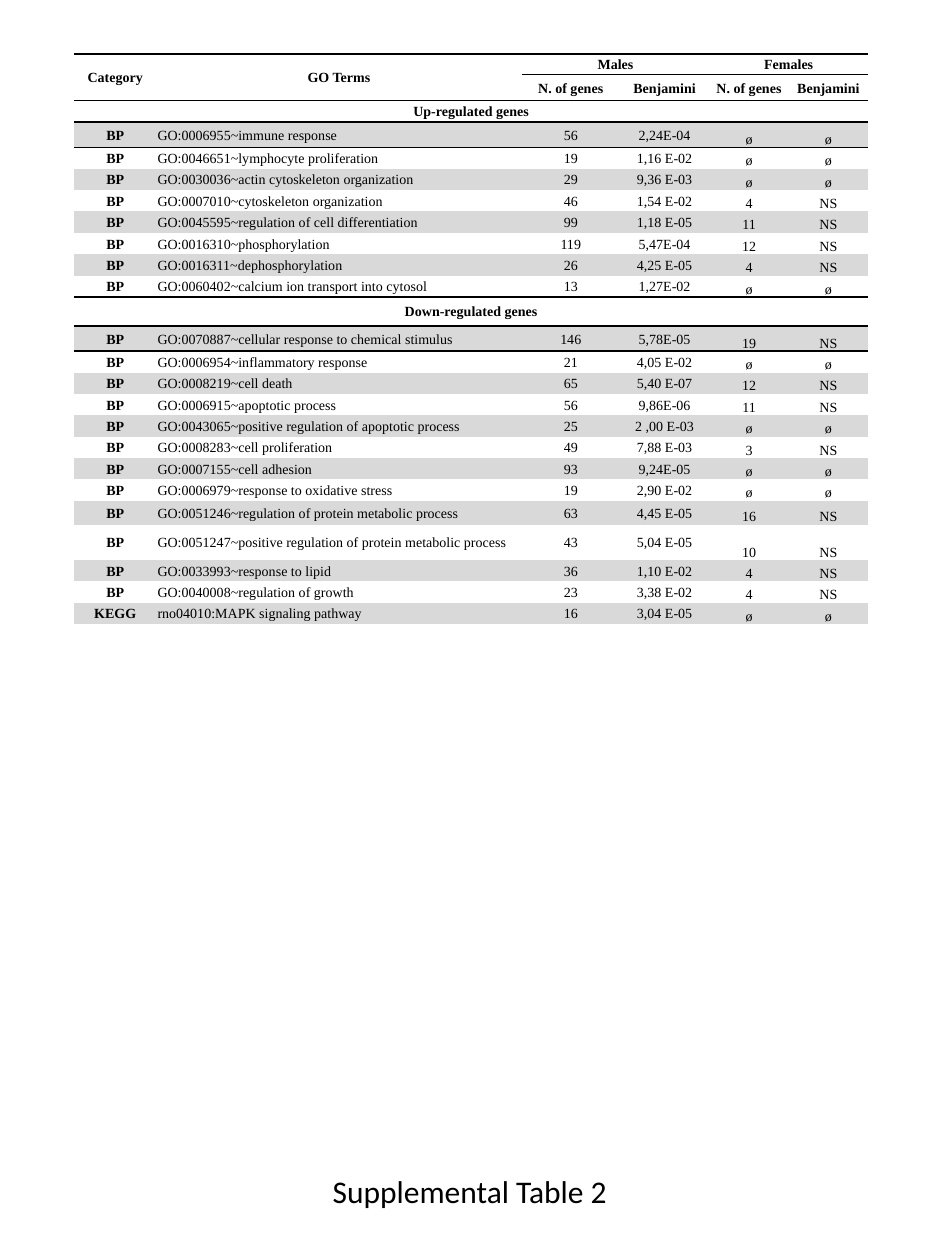
from lxml import etree
from pptx import Presentation
from pptx.dml.color import RGBColor
from pptx.enum.text import MSO_ANCHOR, MSO_AUTO_SIZE, PP_ALIGN
from pptx.oxml.ns import qn
from pptx.util import Inches, Pt

MID, LOW = MSO_ANCHOR.MIDDLE, MSO_ANCHOR.BOTTOM
LEFT, CENTER = PP_ALIGN.LEFT, PP_ALIGN.CENTER
PLAIN = "{2D5ABB26-0587-4C30-8999-92F81FD0307C}"  # no style, no grid


class Theme:
    ink = RGBColor(0, 0, 0)
    band = RGBColor(0xD9, 0xD9, 0xD9)
    table_font, title_font = "Times New Roman", "Calibri"
    table_size, title_size = Pt(8), Pt(18)
    rule = Pt(1)


UP = [
    ("BP", "GO:0006955~immune response", "56", "2,24E-04", "ø", "ø"),
    ("BP", "GO:0046651~lymphocyte proliferation", "19", "1,16 E-02", "ø", "ø"),
    ("BP", "GO:0030036~actin cytoskeleton organization", "29", "9,36 E-03", "ø", "ø"),
    ("BP", "GO:0007010~cytoskeleton organization", "46", "1,54 E-02", "4", "NS"),
    ("BP", "GO:0045595~regulation of cell differentiation", "99", "1,18 E-05", "11", "NS"),
    ("BP", "GO:0016310~phosphorylation", "119", "5,47E-04", "12", "NS"),
    ("BP", "GO:0016311~dephosphorylation", "26", "4,25 E-05", "4", "NS"),
    ("BP", "GO:0060402~calcium ion transport into cytosol", "13", "1,27E-02", "ø", "ø"),
]
DOWN = [
    ("BP", "GO:0070887~cellular response to chemical stimulus", "146", "5,78E-05", "19", "NS"),
    ("BP", "GO:0006954~inflammatory response", "21", "4,05 E-02", "ø", "ø"),
    ("BP", "GO:0008219~cell death", "65", "5,40 E-07", "12", "NS"),
    ("BP", "GO:0006915~apoptotic process", "56", "9,86E-06", "11", "NS"),
    ("BP", "GO:0043065~positive regulation of apoptotic process", "25", "2 ,00 E-03", "ø", "ø"),
    ("BP", "GO:0008283~cell proliferation", "49", "7,88 E-03", "3", "NS"),
    ("BP", "GO:0007155~cell adhesion", "93", "9,24E-05", "ø", "ø"),
    ("BP", "GO:0006979~response to oxidative stress", "19", "2,90 E-02", "ø", "ø"),
    ("BP", "GO:0051246~regulation of protein metabolic process", "63", "4,45 E-05", "16", "NS"),
    ("BP", "GO:0051247~positive regulation of protein metabolic process", "43", "5,04 E-05",
     "10", "NS"),
    ("BP", "GO:0033993~response to lipid", "36", "1,10 E-02", "4", "NS"),
    ("BP", "GO:0040008~regulation of growth", "23", "3,38 E-02", "4", "NS"),
    ("KEGG", "rno04010:MAPK signaling pathway", "16", "3,04 E-05", "ø", "ø"),
]
HEAD = [
    ("Category", "GO Terms", "Males", "", "Females", ""),
    ("", "", "N. of genes", "Benjamini", "N. of genes", "Benjamini"),
]
rows = [*HEAD, ("Up-regulated genes",) + ("",) * 5, *UP,
        ("Down-regulated genes",) + ("",) * 5, *DOWN]
up_row = len(HEAD)
down_row = up_row + 1 + len(UP)
bands = (up_row, down_row)
ruled = {0, 1, up_row, down_row - 1, down_row}  # rows with a line below

widths = [0.65, 2.9, 0.78, 0.71, 0.63, 0.63]
heights = dict.fromkeys(range(len(rows)), 0.17)
heights |= {0: 0.16, 1: 0.21, 3: 0.2, 11: 0.23, 12: 0.2, 20: 0.19, 21: 0.28}


def add_rule(cell, side):
    """Draw a line on the lnT or lnB side of a cell; call before filling it."""
    line = etree.SubElement(cell._tc.get_or_add_tcPr(), qn(f"a:{side}"), w=str(Theme.rule))
    fill = etree.SubElement(line, qn("a:solidFill"))
    etree.SubElement(fill, qn("a:srgbClr"), val=str(Theme.ink))


def style(para, face, size, bold, align):
    para.alignment = align
    font = para.font
    font.name, font.size, font.bold = face, size, bold
    font.color.rgb = Theme.ink


deck = Presentation()
deck.slide_width, deck.slide_height = Inches(7.5), Inches(10)
slide = deck.slides.add_slide(deck.slide_layouts[5])

frame = slide.shapes.add_table(len(rows), len(widths), Inches(0.59), Inches(0.43),
                               Inches(sum(widths)), Inches(sum(heights.values())))
table = frame.table
table.first_row = table.horz_banding = False
next(frame.element.iter(qn("a:tableStyleId"))).text = PLAIN
for col, width in zip(table.columns, widths):
    col.width = Inches(width)
for r, height in heights.items():
    table.rows[r].height = Inches(height)

for r, row in enumerate(rows):
    data = r > up_row and r != down_row
    start = up_row if r < down_row else down_row
    for c, text in enumerate(row):
        cell = table.cell(r, c)
        if r == 0 or (r - 1 in ruled and (r > 1 or c > 1)):
            add_rule(cell, "lnT")
        if r in ruled:
            add_rule(cell, "lnB")
        if data and (r - start) % 2:
            cell.fill.solid()
            cell.fill.fore_color.rgb = Theme.band
        else:
            cell.fill.background()
        cell.margin_left = cell.margin_right = cell.margin_top = Inches(0.01)
        cell.margin_bottom = 0
        cell.vertical_anchor = LOW if data and c > 3 else MID
        cell.text = text
        style(cell.text_frame.paragraphs[0], Theme.table_font, Theme.table_size,
              not data or c == 0, LEFT if data and c == 1 else CENTER)

for c in (0, 1):
    table.cell(0, c).merge(table.cell(1, c))
for c in (2, 4):
    table.cell(0, c).merge(table.cell(0, c + 1))
for r in bands:
    table.cell(r, 0).merge(table.cell(r, len(widths) - 1))

title = slide.shapes.title
title.left, title.top = Inches(2.54), Inches(9.25)
title.width, title.height = Inches(2.42), Inches(0.4)
title.text = "Supplemental Table 2"
box = title.text_frame
box.word_wrap = False
box.auto_size = MSO_AUTO_SIZE.SHAPE_TO_FIT_TEXT
box.vertical_anchor = MSO_ANCHOR.TOP
style(box.paragraphs[0], Theme.title_font, Theme.title_size, False, LEFT)

deck.save("out.pptx")
